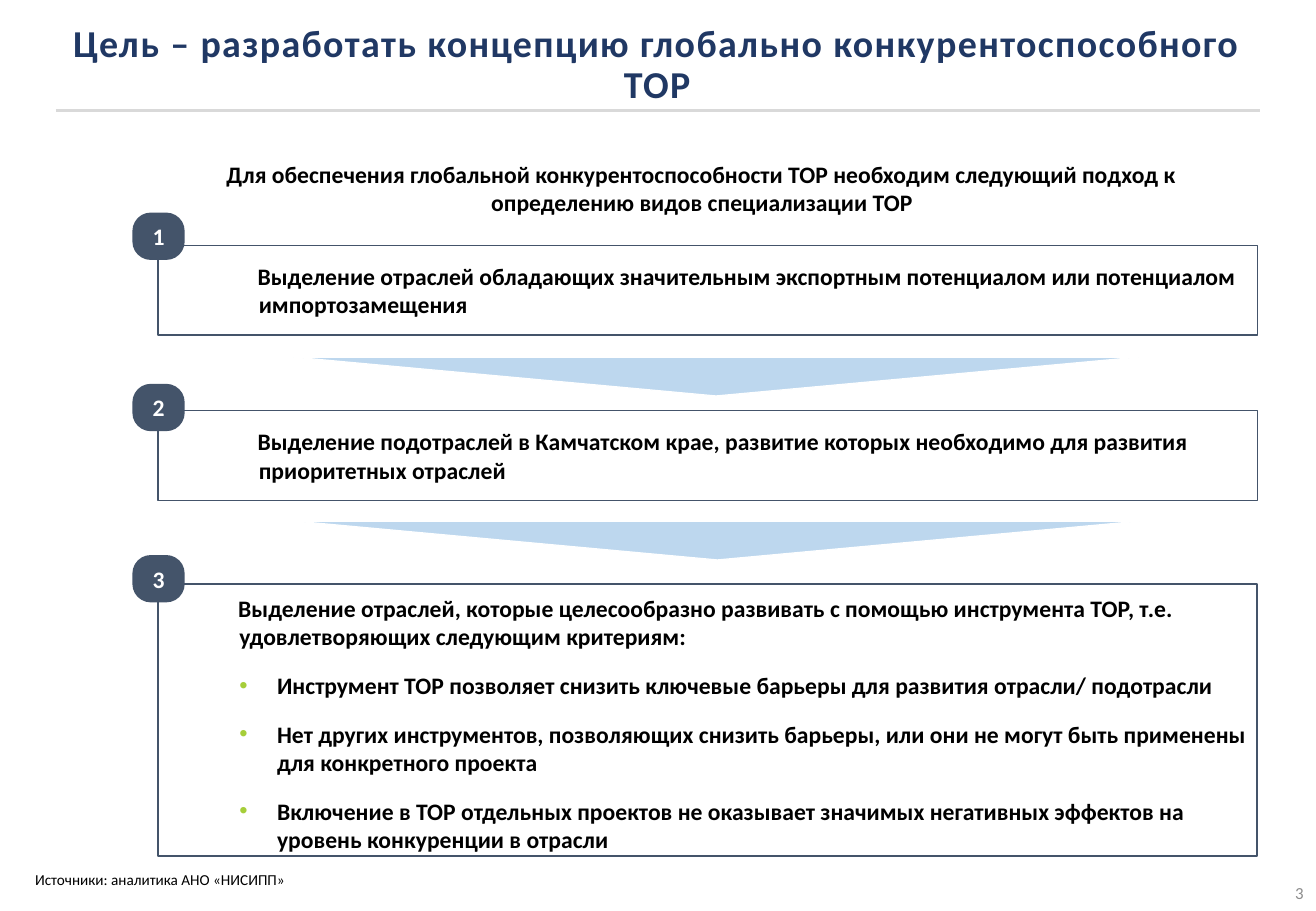
from dataclasses import dataclass
from typing import Any

from lxml import etree
from pptx import Presentation
from pptx.dml.color import RGBColor
from pptx.enum.shapes import MSO_CONNECTOR, MSO_SHAPE
from pptx.enum.text import MSO_ANCHOR, MSO_AUTO_SIZE, PP_ALIGN
from pptx.oxml.ns import qn
from pptx.util import Pt

LEFT, CENTER, RIGHT = PP_ALIGN.LEFT, PP_ALIGN.CENTER, PP_ALIGN.RIGHT
TOP, MIDDLE = MSO_ANCHOR.TOP, MSO_ANCHOR.MIDDLE
RECT, ROUND, TRIANGLE = MSO_SHAPE.RECTANGLE, MSO_SHAPE.ROUNDED_RECTANGLE, MSO_SHAPE.ISOSCELES_TRIANGLE
STRAIGHT = MSO_CONNECTOR.STRAIGHT
NO_AUTOFIT = MSO_AUTO_SIZE.NONE

FONT = "Calibri"
COLORS = {
    "title": "203864", "rule": "D9D9D9", "number": "8C8C8C", "text": "000000",
    "slate": "44546A", "arrow": "BDD7EE", "bullet": "A6CE39", "white": "FFFFFF",
}
STEP_LEFT, STEP_WIDTH = 93.6, 651.6
BADGE_LEFT, BADGE_WIDTH, BADGE_HEIGHT = 78.5, 31, 28.1
ARROW_WIDTH, ARROW_HEIGHT = 500.4, 23
INDENT, HANGING, BULLET_INDENT, BULLET_HANGING = 42.5, -0.7, 64.8, -22.3
STEP_INSETS = (17.3, 2.9, 5.8, 2.9)
PLAIN_INSETS = (5, 2.9, 5, 2.9)


@dataclass
class Format:
    size: float = 14
    color: str = "text"
    bold: bool = True
    align: PP_ALIGN = LEFT
    anchor: MSO_ANCHOR = MIDDLE
    insets: tuple[float, ...] = STEP_INSETS
    indent: tuple[float, float] = (0, 0)
    line_spacing: float = 1.0
    gap: float = 0


@dataclass
class Step:
    top: float
    height: float
    badge_top: float
    text: str
    line_width: float = 0.75
    bullets: tuple[str, ...] = ()


@dataclass
class Arrow:
    left: float
    top: float


STEPS = [
    Step(145.4, 53.3, 126,
         "Выделение отраслей обладающих значительным экспортным потенциалом или потенциалом импортозамещения"),
    Step(243.4, 53.3, 227.5,
         "Выделение подотраслей в Камчатском крае, развитие которых необходимо для развития приоритетных отраслей"),
    Step(346.3, 161.3, 329,
         "Выделение отраслей, которые целесообразно развивать с помощью инструмента ТОР, т.е. "
         "удовлетворяющих следующим критериям:", 1,
         ("Инструмент ТОР позволяет снизить ключевые барьеры для развития отрасли/ подотрасли",
          "Нет других инструментов, позволяющих снизить барьеры, или они не могут быть применены "
          "для конкретного проекта",
          "Включение в ТОР отдельных проектов не оказывает значимых негативных эффектов на "
          "уровень конкуренции в отрасли")),
]
ARROWS = [Arrow(174.2, 211.7), Arrow(175, 308.9)]


def rgb(name: str) -> RGBColor:
    return RGBColor.from_string(COLORS[name])


def set_all(target: Any, values: dict[str, Any]) -> None:
    for name, value in values.items():
        setattr(target, name, value)


def add_bullet(p: Any) -> None:
    pPr = p._p.get_or_add_pPr()
    color = etree.SubElement(pPr, qn("a:buClr"))
    etree.SubElement(color, qn("a:srgbClr")).set("val", COLORS["bullet"])
    etree.SubElement(pPr, qn("a:buFont")).set("typeface", "Arial")
    etree.SubElement(pPr, qn("a:buChar")).set("char", "•")


def write(sp: Any, text: str, fmt: Format, bullets: tuple[str, ...] = ()) -> None:
    tf = sp.text_frame
    left, top, right, bottom = map(Pt, fmt.insets)
    set_all(tf, {
        "word_wrap": True, "auto_size": NO_AUTOFIT, "vertical_anchor": fmt.anchor,
        "margin_left": left, "margin_top": top, "margin_right": right, "margin_bottom": bottom,
    })
    for i, line in enumerate((text, *bullets)):
        p = tf.paragraphs[0] if i == 0 else tf.add_paragraph()
        margin, first = (BULLET_INDENT, BULLET_HANGING) if i else fmt.indent
        if i:
            add_bullet(p)
        pPr = p._p.get_or_add_pPr()
        pPr.set("marL", str(Pt(margin)))
        pPr.set("indent", str(Pt(first)))
        set_all(p, {
            "alignment": fmt.align, "line_spacing": fmt.line_spacing,
            "space_before": Pt(fmt.gap if i else 0), "space_after": Pt(fmt.gap),
        })
        r = p.add_run()
        r.text = line
        set_all(r.font, {"name": FONT, "size": Pt(fmt.size), "bold": fmt.bold})
        r.font.color.rgb = rgb(fmt.color)


def add_text(slide: Any, box: tuple[float, ...], text: str, fmt: Format) -> None:
    write(slide.shapes.add_textbox(*map(Pt, box)), text, fmt)


def add_block(slide: Any, kind: MSO_SHAPE, box: tuple[float, ...], fill: str,
              line: str | None = None, line_width: float = 0.75) -> Any:
    sp = slide.shapes.add_shape(kind, *map(Pt, box))
    sp.shadow.inherit = False
    sp.fill.solid()
    sp.fill.fore_color.rgb = rgb(fill)
    if line:
        sp.line.color.rgb = rgb(line)
        sp.line.width = Pt(line_width)
    else:
        sp.line.fill.background()
    return sp


def add_title(slide: Any) -> None:
    sp = slide.shapes.title
    set_all(sp, {"left": Pt(33.1), "top": Pt(14.4), "width": Pt(712.8), "height": Pt(49)})
    write(sp, "Цель – разработать концепцию глобально конкурентоспособного ТОР",
          Format(22.5, "title", align=CENTER, insets=PLAIN_INSETS, line_spacing=0.9))
    sp.text_frame.paragraphs[0].runs[0].font._element.set("spc", "80")
    rule = slide.shapes.add_connector(STRAIGHT, Pt(33.1), Pt(65.5), Pt(746.6), Pt(65.5))
    rule.line.color.rgb = rgb("rule")
    rule.line.width = Pt(2.25)
    etree.SubElement(rule._element.spPr, qn("a:effectLst"))


def add_step(slide: Any, number: int, step: Step) -> None:
    sp = add_block(slide, RECT, (STEP_LEFT, step.top, STEP_WIDTH, step.height),
                   "white", "slate", step.line_width)
    fmt = Format(indent=(INDENT, HANGING))
    if step.bullets:
        set_all(fmt, {"anchor": TOP, "insets": (5.8,) * 4, "gap": 6})
    write(sp, step.text, fmt, step.bullets)
    badge = add_block(slide, ROUND, (BADGE_LEFT, step.badge_top, BADGE_WIDTH, BADGE_HEIGHT), "slate")
    badge.adjustments[0] = 0.39
    write(badge, str(number), Format(color="white", align=CENTER, insets=(2.2,) * 4))


def main() -> None:
    prs = Presentation()
    prs.slide_width, prs.slide_height = Pt(780), Pt(540)
    slide = prs.slides.add_slide(prs.slide_layouts[5])
    add_title(slide)
    add_text(slide, (32.4, 85, 713.5, 53.3),
             "Для обеспечения глобальной конкурентоспособности ТОР необходим следующий подход "
             "к определению видов специализации ТОР",
             Format(align=CENTER, indent=(INDENT, HANGING)))
    for number, step in enumerate(STEPS, 1):
        add_step(slide, number, step)
    for arrow in ARROWS:
        sp = add_block(slide, TRIANGLE, (arrow.left, arrow.top, ARROW_WIDTH, ARROW_HEIGHT), "arrow", "white")
        sp.rotation = 180
    add_text(slide, (0, 513.4, 780, 26.6), "Источники: аналитика АНО «НИСИПП»",
             Format(9, bold=False, anchor=TOP, insets=(7.2, 3.6, 7.2, 3.6),
                    indent=(14.4, HANGING), line_spacing=0.9))
    add_text(slide, (649.4, 519.8, 128.2, 19.4), "3",
             Format(10, "number", False, RIGHT, insets=PLAIN_INSETS))
    prs.save("out.pptx")


if __name__ == "__main__":
    main()
